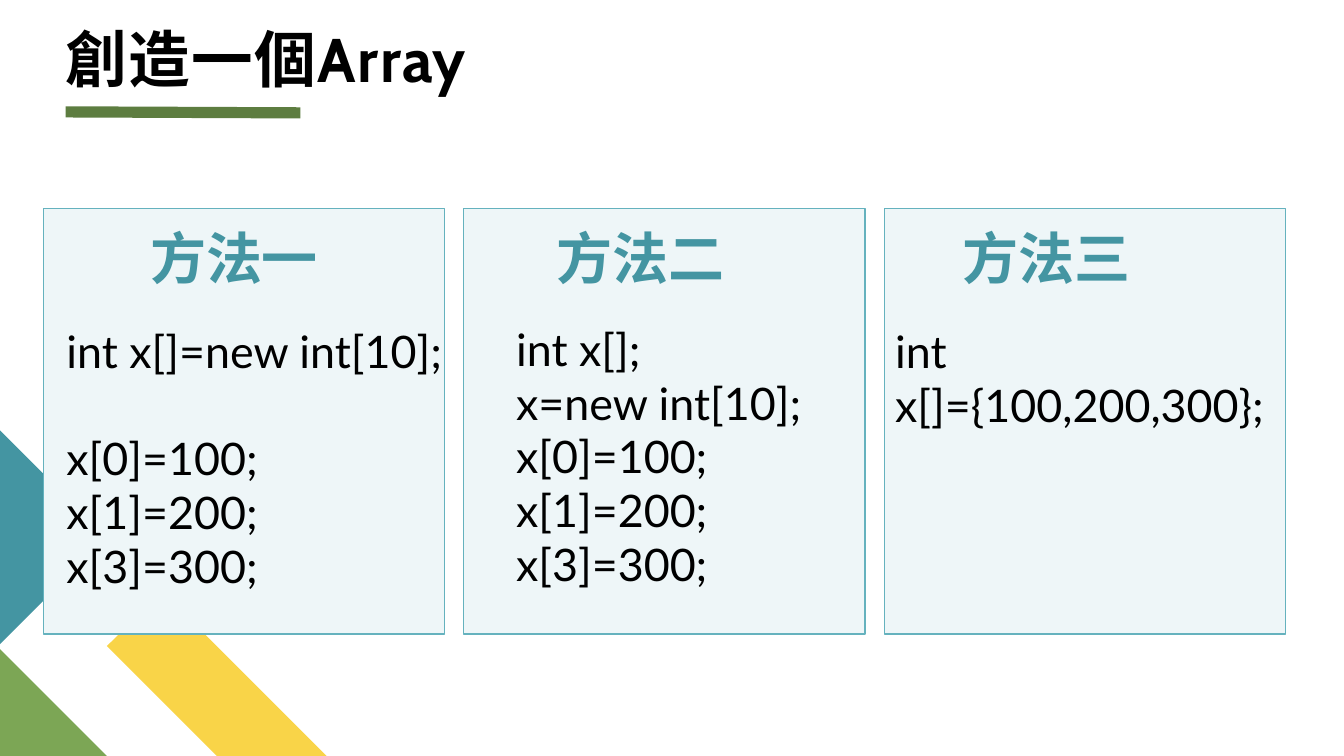
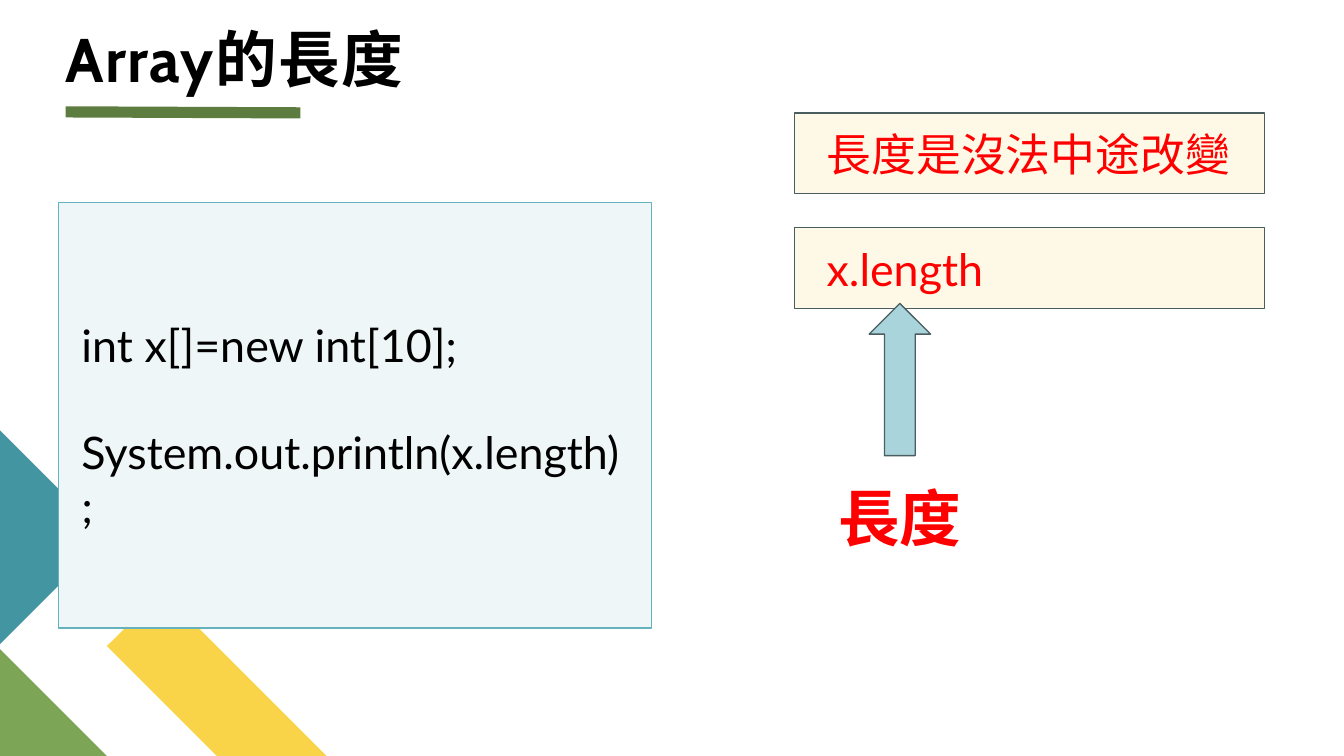
from pptx import Presentation
from pptx.dml.color import RGBColor as RGB
from pptx.enum.shapes import MSO_CONNECTOR as Connector, MSO_SHAPE as Shape
from pptx.enum.text import MSO_ANCHOR as Anchor, MSO_AUTO_SIZE as AutoSize, PP_ALIGN as Align
from pptx.oxml.ns import qn
from pptx.util import Inches, Pt
from lxml import etree

COLORS = {
    "black": "000000", "red": "FF0000", "teal": "4495A2", "yellow": "F9D448",
    "green": "7CA655", "rule": "5D7D40", "card": "EEF6F8", "card_line": "65B2BE",
    "note": "FEF9E6", "note_line": "4A5D60", "arrow": "A9D4DB",
}
CODE = {"size": Pt(32), "name": "Lato"}
HEADING = {"size": Pt(40), "name": "Lato", "bold": True}
LABEL = {"size": Pt(44), "name": "Lato", "bold": True}
TITLE = {"size": Pt(44), "name": "Cabin", "bold": True}
BLANK_LINE = Pt(38.4)

# Corner ornaments, as outlines in inches on the page
CORNER = {
    "yellow": [(3.24, 7.5), (2.15, 7.5), (1.06, 6.41), (1.61, 5.87)],
    "green": [(1.06, 7.5), (0, 7.5), (0, 6.44)],
    "teal": [(0, 4.27), (1.06, 5.33), (0, 6.39)],
}


def color(name):
    return RGB.from_string(COLORS[name])


def style_font(font, formats, color_name):
    for key, value in formats.items():
        setattr(font, key, value)
    font.color.rgb = color(color_name)


def paint(shape, fill, line=None):
    shape.shadow.inherit = False
    shape.fill.solid()
    shape.fill.fore_color.rgb = color(fill)
    if line:
        shape.line.color.rgb = color(line)
        shape.line.width = Pt(1)
    else:
        shape.line.fill.background()


def add_block(slide, kind, place, fill, line):
    block = slide.shapes.add_shape(kind, *map(Inches, place))
    paint(block, fill, line)


def add_text(slide, place, lines, formats, color_name="black", wrap=True, align=Align.LEFT):
    """Write one paragraph per line; None leaves a line's gap before the next."""
    frame = slide.shapes.add_textbox(*map(Inches, place)).text_frame
    frame.word_wrap = wrap
    para, gap = None, False
    for line in lines:
        if line is None:
            gap = True
            continue
        para = frame.add_paragraph() if para else frame.paragraphs[0]
        para.alignment = align
        if gap:
            para.space_before = BLANK_LINE
        gap = False
        span = para.add_run()
        span.text = line
        style_font(span.font, formats, color_name)


def add_corner(slide):
    for fill, points in CORNER.items():
        outline = [(Inches(x), Inches(y)) for x, y in points]
        builder = slide.shapes.build_freeform(*outline[0])
        builder.add_line_segments(outline[1:])
        paint(builder.convert_to_shape(), fill)


def add_title(slide, text):
    box = slide.shapes.title
    box.left, box.top, box.width, box.height = map(Inches, (0.65, 0.11, 11.89, 0.83))
    frame = box.text_frame
    frame_formats = {
        "margin_left": 0, "margin_top": 0, "margin_right": 0, "margin_bottom": 0,
        "vertical_anchor": Anchor.BOTTOM, "word_wrap": True, "auto_size": AutoSize.NONE,
    }
    for key, value in frame_formats.items():
        setattr(frame, key, value)
    para = frame.paragraphs[0]
    para.alignment = Align.LEFT
    para.line_spacing = 0.8
    span = para.add_run()
    span.text = text
    style_font(span.font, TITLE, "black")
    span.font._element.set("spc", "100")


def add_rule(slide):
    ends = map(Inches, (0.65, 1.11, 2.98, 1.12))
    rule = slide.shapes.add_connector(Connector.STRAIGHT, *ends)
    rule.line.color.rgb = color("rule")
    rule.line.width = Pt(8)
    etree.SubElement(rule._element.spPr, qn("a:effectLst"))


def add_page(deck, title):
    slide = deck.slides.add_slide(deck.slide_layouts[5])
    add_rule(slide)
    add_corner(slide)
    add_title(slide, title)
    return slide


def add_note(slide, top, text):
    add_block(slide, Shape.RECTANGLE, (7.88, top, 4.66, 0.8), "note", "note_line")
    add_text(slide, (8.1, top + 0.09, 4.38, 0.64), [text], CODE, "red")


def build_methods(deck):
    slide = add_page(deck, "創造一個Array")
    values = ["x[0]=100;", "x[1]=200;", "x[3]=300;"]
    methods = [
        ("方法一", (0.56, 3.16, 4.38, 2.79), ["int x[]=new int[10];", None, *values]),
        ("方法二", (5.02, 3.14, 3.36, 2.79), ["int x[];", "x=new int[10];", *values]),
        ("方法三", (8.78, 3.16, 4.38, 1.18), ["int x[]={100,200,300};"]),
    ]
    for index, (heading, place, code) in enumerate(methods):
        card = (0.43 + 4.17 * index, 2.07, 3.98, 4.22)
        add_block(slide, Shape.RECTANGLE, card, "card", "card_line")
        add_text(slide, place, code, CODE)
        add_text(slide, (1.39 + 4.03 * index, 2.17, 1.88, 0.77), [heading],
                 HEADING, "teal", wrap=False)


def build_length(deck):
    slide = add_page(deck, "Array的長度")
    # Code card
    add_block(slide, Shape.RECTANGLE, (0.58, 2.01, 5.88, 4.22), "card", "card_line")
    add_text(slide, (0.71, 3.1, 5.59, 1.72),
             ["int x[]=new int[10];", None, "System.out.println(x.length);"], CODE)
    # Notes, with an arrow from the label up to the second
    add_note(slide, 1.12, "長度是沒法中途改變")
    add_note(slide, 2.26, "x.length")
    add_block(slide, Shape.UP_ARROW, (8.62, 3.01, 0.61, 1.51), "arrow", "note_line")
    add_text(slide, (7.99, 4.71, 1.87, 0.84), ["長度"], LABEL, "red", align=Align.CENTER)


def main():
    deck = Presentation()
    deck.slide_width, deck.slide_height = Inches(13.33), Inches(7.5)
    build_methods(deck)
    build_length(deck)
    deck.save("out.pptx")


if __name__ == "__main__":
    main()
